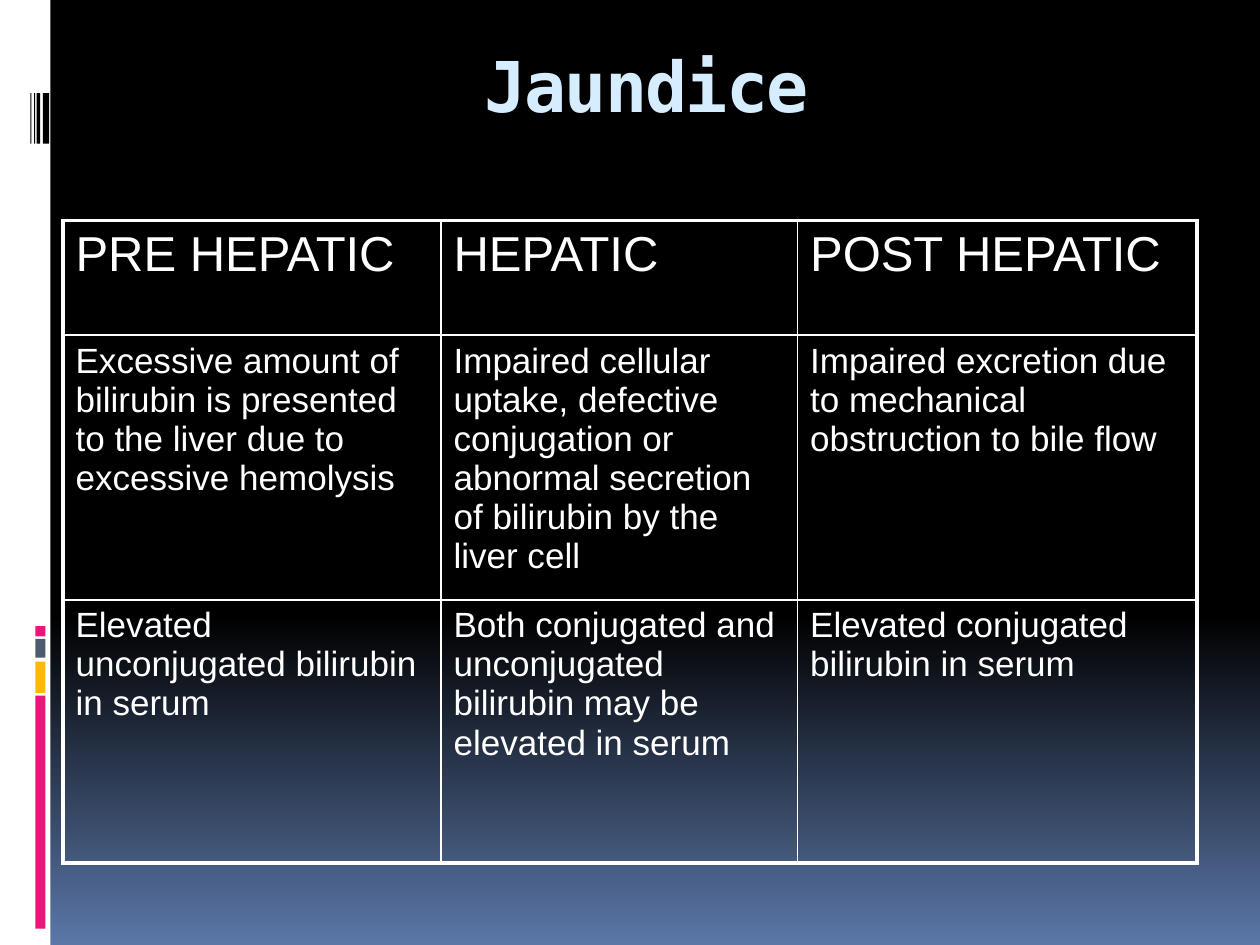
from lxml.etree import SubElement
from pptx import Presentation
from pptx.dml.color import RGBColor
from pptx.enum.shapes import MSO_SHAPE
from pptx.enum.text import MSO_ANCHOR, PP_ALIGN
from pptx.oxml.ns import qn
from pptx.util import Inches, Pt

WHITE, BLACK, PINK = "FFFFFF", "000000", "EA157A"

# Side decoration: left, top, width, height, colour
SIDE_BARS = [
    (0, 0, 0.4, 7.5, WHITE),
    (0.28, 5.52, 0.08, 1.85, PINK),
    (0.28, 5.25, 0.08, 0.25, "FEB80A"),
    (0.28, 5.07, 0.08, 0.15, "4E5B6F"),
    (0.28, 4.97, 0.08, 0.08, PINK),
]
STRIPES = [(0.34, 0.05), (0.29, 0.03), (0.27, 0.01), (0.24, 0.01)]

COLUMN_WIDTHS = [3, 2.83, 3.17]
ROW_HEIGHTS = [0.91, 2.09, 2.09]
JAUNDICE_TYPES = [
    ["PRE HEPATIC", "HEPATIC", "POST HEPATIC"],
    ["Excessive amount of bilirubin is presented to the liver due to excessive hemolysis",
     "Impaired cellular uptake, defective conjugation or abnormal secretion of bilirubin by the liver cell",
     "Impaired excretion due to mechanical obstruction to bile flow"],
    ["Elevated unconjugated bilirubin in serum",
     "Both conjugated and unconjugated bilirubin may be elevated in serum",
     "Elevated conjugated bilirubin in serum"],
]


def color(value):
    return RGBColor.from_string(value)


def set_font(paragraph, name, size, value, bold=False):
    font = paragraph.font
    font.name, font.size, font.bold = name, Pt(size), bold
    font.color.rgb = color(value)


def paint_background(page):
    fill = page.background.fill
    fill.gradient()
    fill.gradient_angle = 270
    for stop, position, value in zip(fill.gradient_stops, (0.65, 1), (BLACK, "5B77A8")):
        stop.position = position
        stop.color.rgb = color(value)


def add_bar(page, left, top, width, height, value):
    bar = page.shapes.add_shape(MSO_SHAPE.RECTANGLE, Inches(left), Inches(top),
                                Inches(width), Inches(height))
    bar.shadow.inherit = False
    bar.fill.solid()
    bar.fill.fore_color.rgb = color(value)
    bar.line.fill.background()


def add_title(page, text):
    box = page.shapes.add_textbox(Inches(0.67), Inches(0.25), Inches(8.92), Inches(1.08))
    frame = box.text_frame
    frame.word_wrap = True
    frame.vertical_anchor = MSO_ANCHOR.TOP
    frame.margin_top = Inches(0.09)
    paragraph = frame.paragraphs[0]
    paragraph.alignment = PP_ALIGN.CENTER
    span = paragraph.add_run()
    span.text = text
    set_font(paragraph, "DejaVu Sans Mono", 40, "D6ECFF", bold=True)
    span.font.bold = True
    span.font._element.set("spc", "-100")


def set_borders(cell, widths):
    properties = cell._tc.get_or_add_tcPr()
    for index, (side, width) in enumerate(widths.items()):
        line = properties.makeelement(qn(f"a:ln{side}"), {"w": str(Pt(width))})
        fill = SubElement(line, qn("a:solidFill"))
        SubElement(fill, qn("a:srgbClr"), val=WHITE)
        properties.insert(index, line)


def add_table(page, rows):
    last_row, last_column = len(rows) - 1, len(COLUMN_WIDTHS) - 1
    table = page.shapes.add_table(len(rows), len(COLUMN_WIDTHS), Inches(0.5), Inches(1.75),
                                  Inches(9), Inches(sum(ROW_HEIGHTS))).table
    table.first_row = table.horz_banding = False
    for column, width in zip(table.columns, COLUMN_WIDTHS):
        column.width = Inches(width)
    for r, (texts, height) in enumerate(zip(rows, ROW_HEIGHTS)):
        table.rows[r].height = Inches(height)
        for c, text in enumerate(texts):
            cell = table.cell(r, c)
            cell.text = text
            cell.fill.background()
            set_font(cell.text_frame.paragraphs[0], "Arial", 28 if r == 0 else 20, WHITE)
            # Thick outer frame, thin inner rules
            outer = {"L": c == 0, "R": c == last_column, "T": r == 0, "B": r == last_row}
            set_borders(cell, {side: 2.25 if edge else 1 for side, edge in outer.items()})


def main():
    deck = Presentation()
    deck.slide_width, deck.slide_height = Inches(10), Inches(7.5)
    page = deck.slides.add_slide(deck.slide_layouts[6])
    paint_background(page)

    # Side strip
    for bar in SIDE_BARS:
        add_bar(page, *bar)
    for left, width in STRIPES:
        add_bar(page, left, 0.74, width, 0.4, BLACK)

    # Content
    add_title(page, "Jaundice")
    add_table(page, JAUNDICE_TYPES)
    deck.save("out.pptx")


if __name__ == "__main__":
    main()
